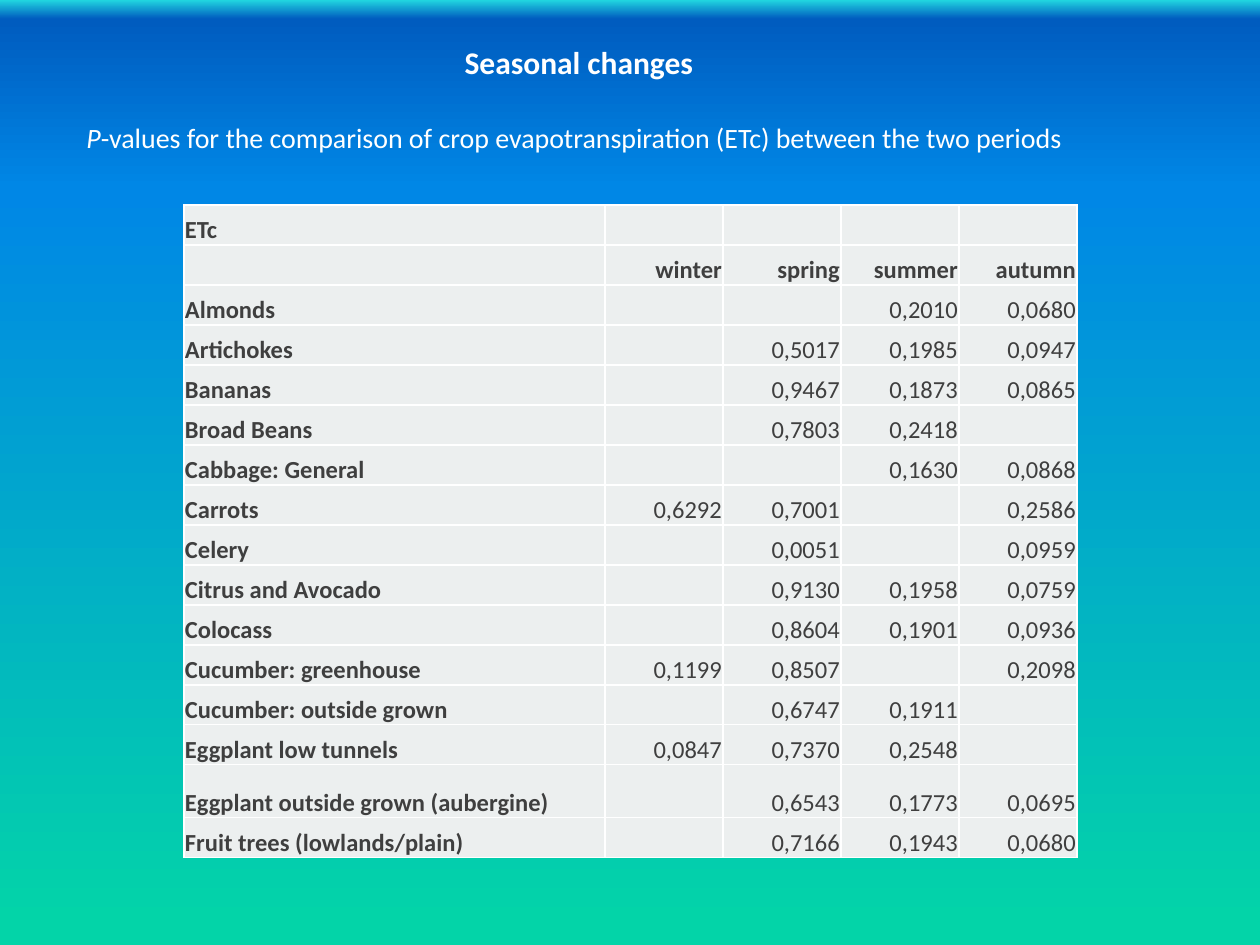
from lxml.etree import SubElement
from pptx import Presentation
from pptx.dml.color import RGBColor
from pptx.enum.text import MSO_ANCHOR as Anchor, PP_ALIGN as Align
from pptx.oxml import parse_xml
from pptx.oxml.ns import nsdecls, qn

PX = 914400 // 126
FONT, WHITE, INK, CELL = "Calibri", "FFFFFF", "3F3F3F", "ECEFEF"
STOPS = [(0, "21D6E0"), (2, "005CBF"), (20, "0087E6"), (98, "03D4A8")]
COLS = [421] + [118] * 4
ROW_H, TALL_ROW_H, TALL_ROW = 40, 53, "Eggplant outside grown (aubergine)"
HEADER_ROWS = 2
ROWS = [
    ("ETc", "", "", "", ""),
    ("", "winter", "spring", "summer", "autumn"),
    ("Almonds", "", "", "0,2010", "0,0680"),
    ("Artichokes", "", "0,5017", "0,1985", "0,0947"),
    ("Bananas", "", "0,9467", "0,1873", "0,0865"),
    ("Broad Beans", "", "0,7803", "0,2418", ""),
    ("Cabbage: General", "", "", "0,1630", "0,0868"),
    ("Carrots", "0,6292", "0,7001", "", "0,2586"),
    ("Celery", "", "0,0051", "", "0,0959"),
    ("Citrus and Avocado", "", "0,9130", "0,1958", "0,0759"),
    ("Colocass", "", "0,8604", "0,1901", "0,0936"),
    ("Cucumber: greenhouse", "0,1199", "0,8507", "", "0,2098"),
    ("Cucumber: outside grown", "", "0,6747", "0,1911", ""),
    ("Eggplant low tunnels", "0,0847", "0,7370", "0,2548", ""),
    (TALL_ROW, "", "0,6543", "0,1773", "0,0695"),
    ("Fruit trees (lowlands/plain)", "", "0,7166", "0,1943", "0,0680"),
]


def rgb(value):
    """Turn a hex string into a colour."""
    return RGBColor.from_string(value)


def apply(obj, formats):
    """Set each attribute named in formats."""
    for name, value in formats.items():
        setattr(obj, name, value)


def add_run(p, text, size, color, bold=False, italic=False):
    """Add one formatted run to a paragraph."""
    r = p.add_run()
    r.text = text
    apply(r.font, {"name": FONT, "size": size * 12700, "bold": bold, "italic": italic})
    r.font.color.rgb = rgb(color)


def paint_background(s):
    """Fill the background with the vertical gradient."""
    fill = s.background.fill
    fill.gradient()
    fill.gradient_angle = 270
    stops = next(s.element.iter(qn("a:gsLst")))
    stops.clear()
    for pos, color in STOPS:
        stop = SubElement(stops, qn("a:gs"), pos=str(pos * 1000))
        SubElement(stop, qn("a:srgbClr"), val=color)


def place_text(sp, x, y, w, h):
    """Put a text shape in its box and return its first paragraph."""
    apply(sp, {"left": x * PX, "top": y * PX, "width": w * PX, "height": h * PX})
    apply(sp.text_frame, {"word_wrap": True, "vertical_anchor": Anchor.TOP})
    p = sp.text_frame.paragraphs[0]
    p.alignment = Align.LEFT
    return p


def add_heading(s, x, y, w):
    """Place the title and the caption below it."""
    p = place_text(s.shapes.title, x + 378, y, w - 378, 51)
    add_run(p, "Seasonal changes", 18, WHITE, bold=True)
    p = place_text(s.shapes.add_textbox(0, 0, 0, 0), x, y + 77, w, 46)
    add_run(p, "P", 16, WHITE, italic=True)
    add_run(p, "-values for the comparison of crop evapotranspiration (ETc) "
               "between the two periods", 16, WHITE)


def add_borders(cell):
    """Give a cell thin white lines on all sides."""
    tcPr = cell._tc.get_or_add_tcPr()
    for i, side in enumerate("LRTB"):
        tcPr.insert(i, parse_xml(
            f'<a:ln{side} {nsdecls("a")} w="12700"><a:solidFill>'
            f'<a:srgbClr val="{WHITE}"/></a:solidFill></a:ln{side}>'))


def fill_cell(cell, text, bold, align):
    """Format one cell and write its text."""
    apply(cell, {"margin_left": PX, "margin_right": PX, "margin_top": PX,
                 "margin_bottom": 0, "vertical_anchor": Anchor.BOTTOM})
    cell.fill.solid()
    cell.fill.fore_color.rgb = rgb(CELL)
    add_borders(cell)
    if text:
        p = cell.text_frame.paragraphs[0]
        p.alignment = align
        add_run(p, text, 14, INK, bold)


def add_values_table(s, x, y):
    """Place the table of P-values by crop and season."""
    heights = [TALL_ROW_H if row[0] == TALL_ROW else ROW_H for row in ROWS]
    table = s.shapes.add_table(len(ROWS), len(COLS), x * PX, y * PX,
                               sum(COLS) * PX, sum(heights) * PX).table
    apply(table, {"first_row": False, "horz_banding": False})
    for col, width in zip(table.columns, COLS):
        col.width = width * PX
    for i, (row, values) in enumerate(zip(table.rows, ROWS)):
        row.height = heights[i] * PX
        for j, text in enumerate(values):
            fill_cell(row.cells[j], text, i < HEADER_ROWS or j == 0,
                      Align.RIGHT if j else Align.LEFT)


def main():
    """Build the slide and save it."""
    prs = Presentation()
    apply(prs, {"slide_width": 1260 * PX, "slide_height": 945 * PX})
    s = prs.slides.add_slide(prs.slide_layouts[5])
    paint_background(s)
    add_values_table(s, 184, 205)
    add_heading(s, 74, 37, 1142)
    prs.save("out.pptx")


if __name__ == "__main__":
    main()
